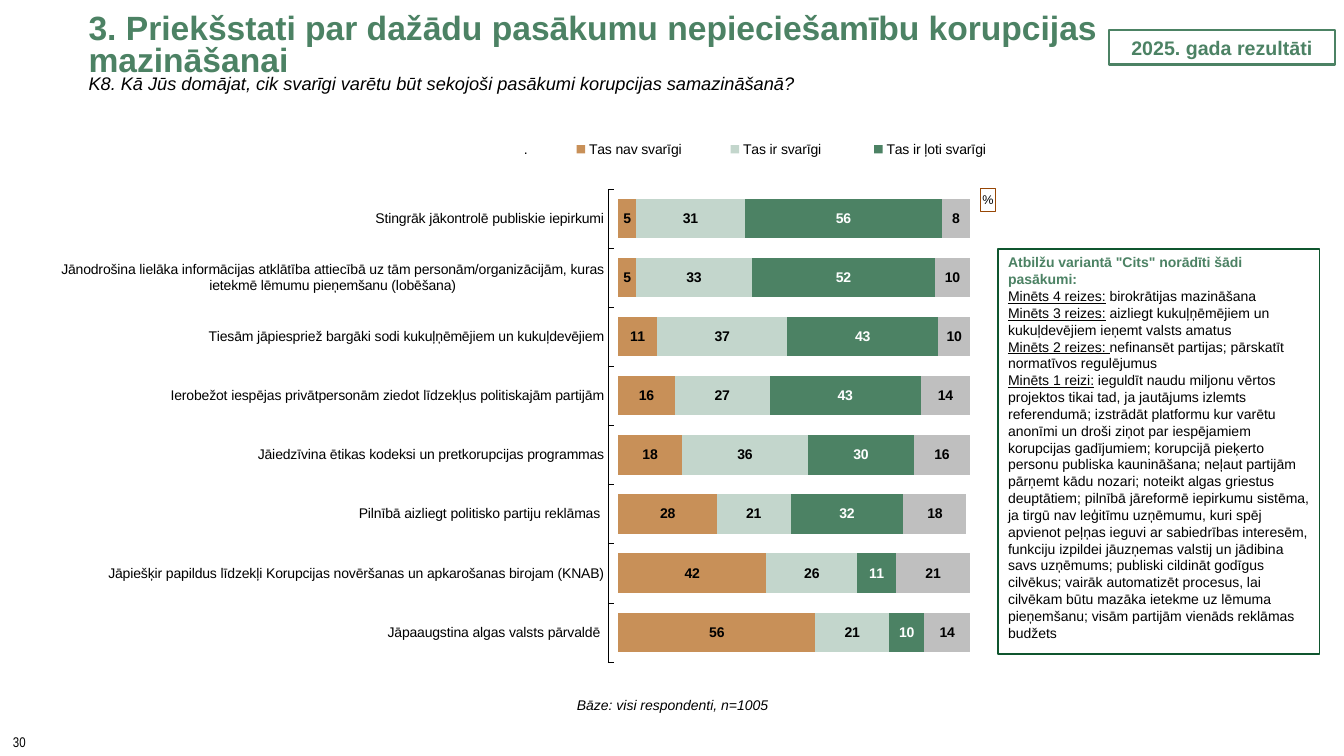
from lxml import etree
from pptx import Presentation
from pptx.chart.data import CategoryChartData
from pptx.dml.color import RGBColor
from pptx.enum.chart import XL_CHART_TYPE, XL_LEGEND_POSITION, XL_TICK_MARK
from pptx.enum.shapes import MSO_SHAPE
from pptx.enum.text import MSO_ANCHOR, PP_ALIGN
from pptx.oxml import parse_xml
from pptx.oxml.ns import nsdecls, qn
from pptx.util import Inches, Pt

BLACK = RGBColor(0x00, 0x00, 0x00)
WHITE = RGBColor(0xFF, 0xFF, 0xFF)
GREEN = RGBColor(0x4C, 0x82, 0x64)
DARK_GREEN = RGBColor(0x0F, 0x55, 0x2E)
PALE_GREEN = RGBColor(0xC3, 0xD6, 0xCC)
OCHRE = RGBColor(0xC8, 0x90, 0x58)
BROWN = RGBColor(0x97, 0x47, 0x06)
GREY = RGBColor(0xBF, 0xBF, 0xBF)
BAR_STACKED = XL_CHART_TYPE.BAR_STACKED
TOP_LEGEND = XL_LEGEND_POSITION.TOP
TICK_INSIDE, TICK_NONE = XL_TICK_MARK.INSIDE, XL_TICK_MARK.NONE
RECTANGLE = MSO_SHAPE.RECTANGLE
TOP, MIDDLE = MSO_ANCHOR.TOP, MSO_ANCHOR.MIDDLE
LEFT, CENTER = PP_ALIGN.LEFT, PP_ALIGN.CENTER


def style(font, size, color=BLACK, bold=False, italic=False, name="Arial"):
    font.name, font.size, font.bold, font.italic = name, Pt(size), bold, italic
    font.color.rgb = color


def place(parent, index, **fractions):
    for old in parent.findall(qn("c:layout")):
        parent.remove(old)
    layout = parse_xml(f'<c:layout {nsdecls("c")}><c:manualLayout/></c:layout>')
    manual = layout[0]
    if parent.tag == qn("c:plotArea"):
        etree.SubElement(manual, qn("c:layoutTarget")).set("val", "inner")
    for key in ("x", "y"):
        etree.SubElement(manual, qn(f"c:{key}Mode")).set("val", "edge")
    for key, value in fractions.items():
        etree.SubElement(manual, qn(f"c:{key}")).set("val", str(value))
    parent.insert(index, layout)


prs = Presentation()
prs.slide_width, prs.slide_height = Inches(13.33), Inches(7.5)
s = prs.slides.add_slide(prs.slide_layouts[6])

texts = [
    ("30", 0.03, 7.23, 1.47, 0.27, TOP, LEFT, 1, dict(size=10, name="Arial Narrow")),
    ("3. Priekšstati par dažādu pasākumu nepieciešamību korupcijas mazināšanai",
     0.78, 0.03, 10.22, 0.87, MIDDLE, LEFT, 0.8, dict(size=24, color=GREEN, bold=True)),
    ("K8. Kā Jūs domājat, cik svarīgi varētu būt sekojoši pasākumi korupcijas samazināšanā?",
     0.78, 0.67, 10.22, 0.32, TOP, LEFT, 1, dict(size=13, italic=True)),
    ("Bāze: visi respondenti, n=1005",
     4.76, 6.86, 3.82, 0.27, MIDDLE, CENTER, 1, dict(size=10, italic=True)),
]
for text, x, y, w, h, anchor, align, spacing, look in texts:
    tf = s.shapes.add_textbox(Inches(x), Inches(y), Inches(w), Inches(h)).text_frame
    tf.word_wrap = True
    tf.vertical_anchor = anchor
    tf.text = text
    p = tf.paragraphs[0]
    p.alignment, p.line_spacing = align, spacing
    style(p.runs[0].font, **look)

measures = [
    ("Stingrāk jākontrolē publiskie iepirkumi", 5, 31, 56, 8),
    ("Jānodrošina lielāka informācijas atklātība attiecībā uz tām personām/organizācijām, "
     "kuras ietekmē lēmumu pieņemšanu (lobēšana)", 5, 33, 52, 10),
    ("Tiesām jāpiespriež bargāki sodi kukuļņēmējiem un kukuļdevējiem", 11, 37, 43, 10),
    ("Ierobežot iespējas privātpersonām ziedot līdzekļus politiskajām partijām", 16, 27, 43, 14),
    ("Jāiedzīvina ētikas kodeksi un pretkorupcijas programmas", 18, 36, 30, 16),
    ("Pilnībā aizliegt politisko partiju reklāmas ", 28, 21, 32, 18),
    ("Jāpiešķir papildus līdzekļi Korupcijas novēršanas un apkarošanas birojam (KNAB)",
     42, 26, 11, 21),
    ("Jāpaaugstina algas valsts pārvaldē ", 56, 21, 10, 14),
]
answers = [
    ("Tas nav svarīgi", OCHRE, BLACK),
    ("Tas ir svarīgi ", PALE_GREEN, BLACK),
    ("Tas ir ļoti svarīgi", GREEN, WHITE),
    ("Nezina / NA", GREY, BLACK),
]
SPACER = 3
data = CategoryChartData(number_format="0")
data.categories = [m[0] for m in measures]
data.add_series(".", [SPACER] * len(measures))
for i, (name, fill, ink) in enumerate(answers, 1):
    data.add_series(name, [m[i] for m in measures])
chart = s.shapes.add_chart(BAR_STACKED, Inches(0.44), Inches(1.09),
                           Inches(9.98), Inches(5.59), data).chart
style(chart.font, 10, name="Calibri")
plot = chart.plots[0]
plot.gap_width, plot.overlap, plot.vary_by_categories = 50, 100, False
plot.series[0].format.fill.background()
for series, (name, fill, ink) in zip(list(plot.series)[1:], answers):
    series.format.fill.solid()
    series.format.fill.fore_color.rgb = fill
    labels = series.data_labels
    labels.show_value = True
    labels.number_format, labels.number_format_is_linked = "0", False
    style(labels.font, 10, ink, bold=True)

axis = chart.category_axis
axis.reverse_order = True
axis.major_tick_mark, axis.minor_tick_mark = TICK_INSIDE, TICK_NONE
axis.format.line.color.rgb, axis.format.line.width = BLACK, Pt(0.25)
style(axis.tick_labels.font, 10)
scale = chart.value_axis
scale.minimum_scale, scale.maximum_scale = 0, 100 + SPACER
scale.has_major_gridlines = False
scale.visible = False

chart.has_legend = True
legend = chart.legend
legend.position, legend.include_in_layout = TOP_LEGEND, False
style(legend.font, 10)
legend._element.insert(1, parse_xml(
    f'<c:legendEntry {nsdecls("c")}><c:idx val="0"/><c:delete val="1"/></c:legendEntry>'))
place(legend._element, 2, x=0.42, y=0.04, w=0.56, h=0.06)

chart.has_title = True
title = chart.chart_title
title.text_frame.text = "%"
style(title.text_frame.paragraphs[0].runs[0].font, 9)
title.format.line.color.rgb, title.format.line.width = BROWN, Pt(0.75)
place(title._element, 1, x=0.93, y=0.14)
place(chart._chartSpace.chart.plotArea, 0, x=0.56, y=0.14, w=0.36, h=0.84)

badge = [[("2025. gada rezultāti", dict(size=14, color=GREEN, bold=True), False)]]
mentions = [
    ("Minēts 4 reizes:", " birokrātijas mazināšana"),
    ("Minēts 3 reizes:", " aizliegt kukuļņēmējiem un kukuļdevējiem ieņemt valsts amatus"),
    ("Minēts 2 reizes: ", "nefinansēt partijas; pārskatīt normatīvos regulējumus"),
    ("Minēts 1 reizi:", " ieguldīt naudu miljonu vērtos projektos tikai tad, ja jautājums izlemts "
     "referendumā; izstrādāt platformu kur varētu anonīmi un droši ziņot par iespējamiem "
     "korupcijas gadījumiem; korupcijā pieķerto personu publiska kaunināšana; neļaut partijām "
     "pārņemt kādu nozari; noteikt algas griestus deuptātiem; pilnībā jāreformē iepirkumu "
     "sistēma, ja tirgū nav leģitīmu uzņēmumu, kuri spēj apvienot peļņas ieguvi ar sabiedrības "
     "interesēm, funkciju izpildei jāuzņemas valstij un jādibina savs uzņēmums; publiski "
     "cildināt godīgus cilvēkus; vairāk automatizēt procesus, lai cilvēkam būtu mazāka ietekme "
     "uz lēmuma pieņemšanu; visām partijām vienāds reklāmas budžets"),
]
other = [[('Atbilžu variantā "Cits" norādīti šādi pasākumi:',
           dict(size=10, color=GREEN, bold=True), False)]]
other += [[(count, dict(size=10), True), (idea, dict(size=10), False)]
          for count, idea in mentions]
boxes = [
    (11, 0.3, 2.24, 0.34, GREEN, 1.5, MIDDLE, CENTER, badge),
    (9.9, 2.47, 3.19, 4.02, DARK_GREEN, 1, TOP, LEFT, other),
]
for x, y, w, h, line, width, anchor, align, paragraphs in boxes:
    sp = s.shapes.add_shape(RECTANGLE, Inches(x), Inches(y), Inches(w), Inches(h))
    sp.shadow.inherit = False
    sp.fill.background()
    sp.line.color.rgb, sp.line.width = line, Pt(width)
    tf = sp.text_frame
    tf.word_wrap, tf.vertical_anchor = True, anchor
    for i, runs in enumerate(paragraphs):
        p = tf.add_paragraph() if i else tf.paragraphs[0]
        p.alignment = align
        for text, look, underlined in runs:
            r = p.add_run()
            r.text = text
            style(r.font, **look)
            r.font.underline = underlined

prs.save("out.pptx")
